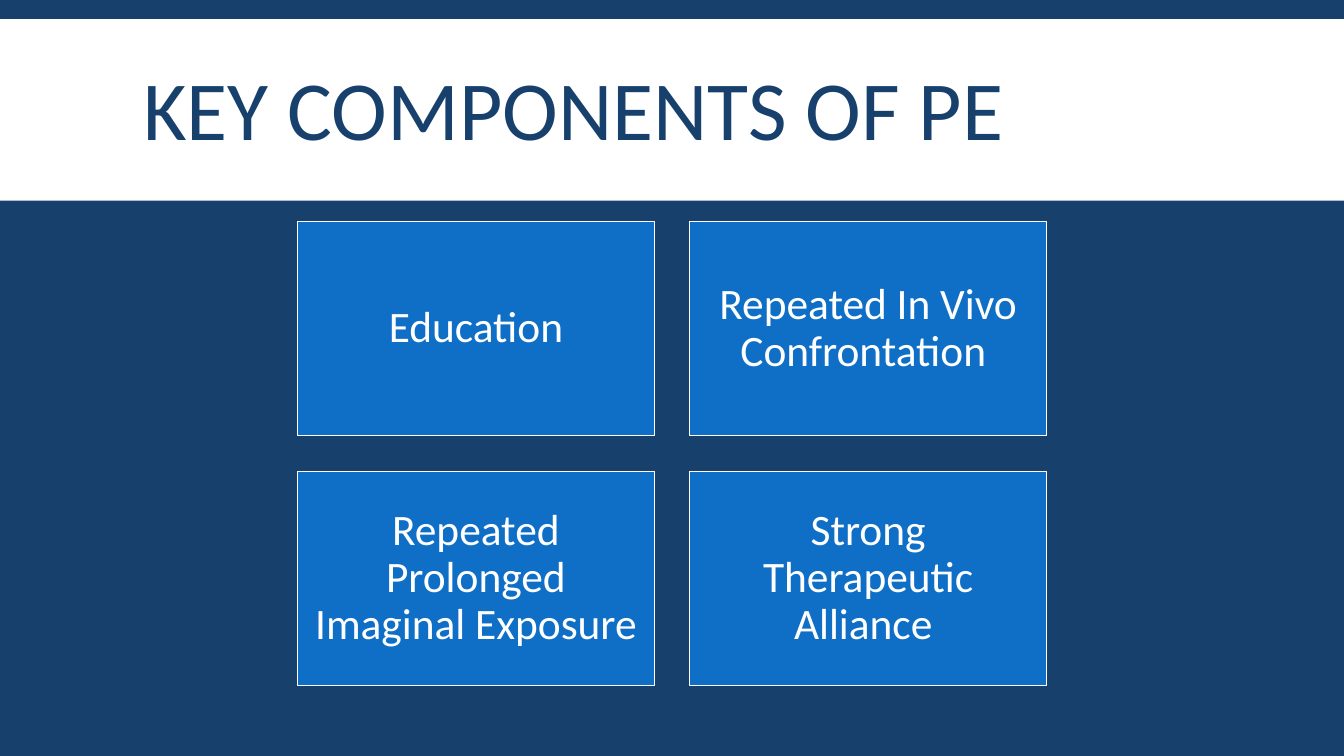
from pptx import Presentation
from pptx import util as u
from pptx.dml import color
from pptx.enum import shapes, text

NAVY, BLUE, WHITE = "17406D", "0F6FC6", "FFFFFF"


def rgb(value):
    return color.RGBColor.from_string(value)


class Deck:
    font = "Calibri"

    def __init__(self, prs, background):
        self.s = prs.slides.add_slide(prs.slide_layouts[5])
        fill = self.s.background.fill
        fill.solid()
        fill.fore_color.rgb = rgb(background)

    def set_text(self, sp, words, size, ink, align, spacing, inset):
        tf = sp.text_frame
        tf.text = words
        tf.word_wrap = True
        tf.auto_size = text.MSO_AUTO_SIZE.NONE
        tf.vertical_anchor = text.MSO_ANCHOR.MIDDLE
        tf.margin_left = tf.margin_right = u.Inches(inset[0])
        tf.margin_top = tf.margin_bottom = u.Inches(inset[1])
        p = tf.paragraphs[0]
        p.alignment = align
        p.line_spacing = spacing
        p.font.name = self.font
        p.font.size = u.Pt(size)
        p.font.color.rgb = rgb(ink)

    def title(self, words, left, top, width, height):
        sp = self.s.shapes.title
        sp.left, sp.top = u.Inches(left), u.Inches(top)
        sp.width, sp.height = u.Inches(width), u.Inches(height)
        self.set_text(sp, words, 60, NAVY, text.PP_ALIGN.LEFT, 0.85, (0.1, 0.05))

    def rect(self, left, top, width, height, fill, line=None):
        sp = self.s.shapes.add_shape(
            shapes.MSO_SHAPE.RECTANGLE, u.Inches(left), u.Inches(top),
            u.Inches(width), u.Inches(height))
        sp.shadow.inherit = False
        sp.fill.solid()
        sp.fill.fore_color.rgb = rgb(fill)
        if line:
            sp.line.color.rgb = rgb(line)
            sp.line.width = u.Pt(1)
        else:
            sp.line.fill.background()
        return sp

    def band(self, top, height):
        sp = self.rect(0, top, 13.33, height, WHITE)
        # Keep the band behind the title
        self.s.shapes.title.element.addprevious(sp.element)

    def card(self, words, left, top, width, height):
        sp = self.rect(left, top, width, height, BLUE, WHITE)
        self.set_text(sp, words, 31, WHITE, text.PP_ALIGN.CENTER, 0.9, (0.13, 0.13))


def main():
    prs = Presentation()
    prs.slide_width, prs.slide_height = u.Inches(13.33), u.Inches(7.5)
    deck = Deck(prs, NAVY)

    # Heading
    deck.band(0.19, 1.8)
    deck.title("KEY COMPONENTS OF PE", 1.32, 0.31, 10.7, 1.65)

    # Two-by-two grid of components
    components = ["Education", "Repeated In Vivo Confrontation ",
                  "Repeated Prolonged Imaginal Exposure",
                  "Strong Therapeutic Alliance "]
    col_step, row_step = 3.89, 2.48
    for i, words in enumerate(components):
        row, col = divmod(i, 2)
        deck.card(words, 2.95 + col * col_step, 2.2 + row * row_step, 3.54, 2.12)

    prs.save("out.pptx")


if __name__ == "__main__":
    main()
